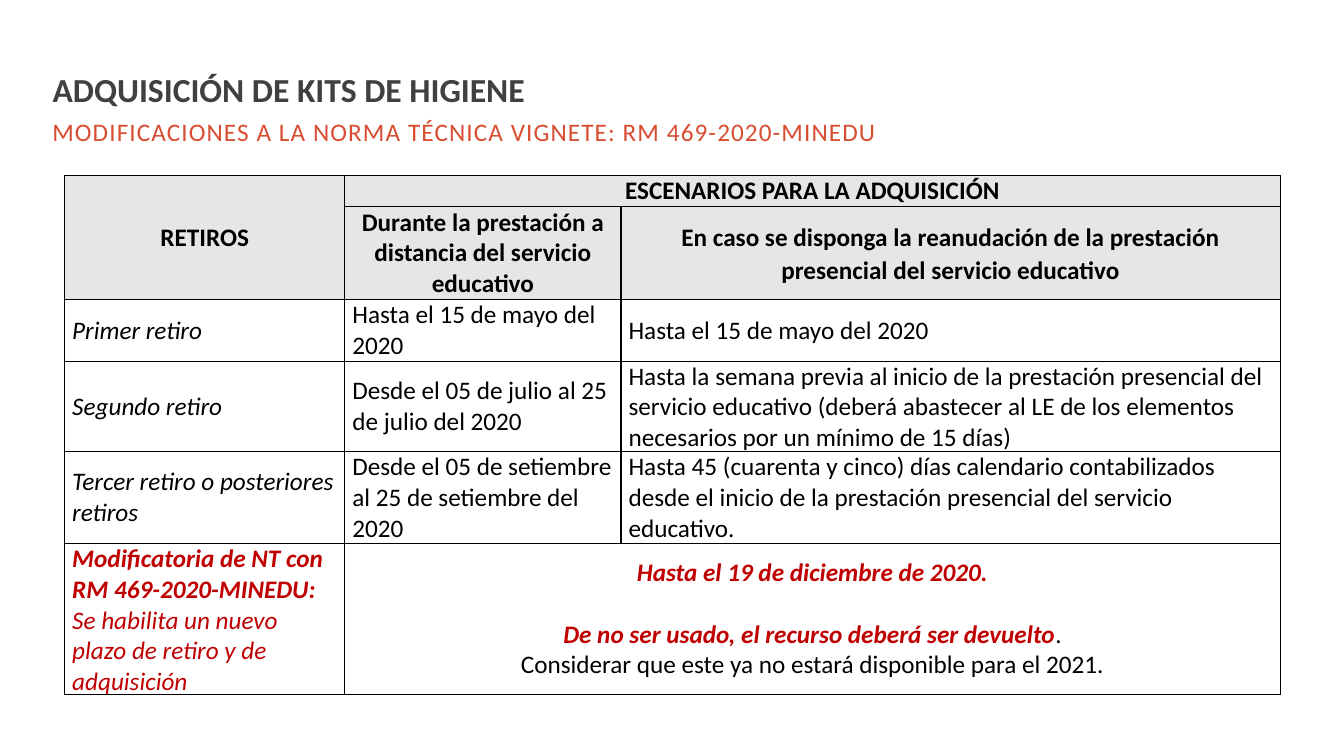
from lxml import etree
from pptx import Presentation
from pptx.dml.color import RGBColor
from pptx.enum.text import MSO_ANCHOR, MSO_AUTO_SIZE, PP_ALIGN
from pptx.oxml import parse_xml
from pptx.oxml.ns import nsdecls
from pptx.util import Cm, Pt

MIDDLE, BOTTOM = MSO_ANCHOR.MIDDLE, MSO_ANCHOR.BOTTOM
LEFT, CENTER = PP_ALIGN.LEFT, PP_ALIGN.CENTER
NO_AUTOFIT = MSO_AUTO_SIZE.NONE
BLACK, RED, GREY = "000000", "C00000", "E7E6E6"


def color(value):
    return RGBColor.from_string(value)


def style(paragraph, size=18, ink=BLACK, bold=False, italic=False, align=LEFT):
    paragraph.alignment = align
    font = paragraph.font
    font.name, font.size = "Calibri", Pt(size)
    font.bold, font.italic = bold, italic
    font.color.rgb = color(ink)


presentation = Presentation()
presentation.slide_width, presentation.slide_height = Cm(33.87), Cm(19.05)
slide = presentation.slides.add_slide(presentation.slide_layouts[5])

title = slide.shapes.title
title.left, title.top, title.width, title.height = Cm(1.07), Cm(1.98), Cm(19.35), Cm(0.91)
title.text_frame.text = "ADQUISICIÓN DE KITS DE HIGIENE"
title.text_frame.vertical_anchor = BOTTOM
title.text_frame.auto_size = NO_AUTOFIT
title.text_frame.paragraphs[0].line_spacing = 0.9
style(title.text_frame.paragraphs[0], 24, "404040", bold=True)

subtitle = slide.shapes.add_textbox(Cm(1.07), Cm(2.8), Cm(23.72), Cm(1.02))
subtitle.text_frame.word_wrap = True
paragraph = subtitle.text_frame.paragraphs[0]
run = paragraph.add_run()
run.text = "MODIFICACIONES A LA NORMA TÉCNICA VIGNETE: RM 469-2020-MINEDU"
style(paragraph, ink="D84C30")
run.font._element.set("spc", "80")

column_widths = [7.06, 6.96, 16.61]
row_heights = [0.79, 2.34, 1.55, 2.26, 2.31, 3.81]
rows = [
    ["RETIROS", "ESCENARIOS PARA LA ADQUISICIÓN", ""],
    ["", "Durante la prestación a distancia del servicio educativo",
     "En caso se disponga la reanudación de la prestación presencial del servicio educativo"],
    ["Primer retiro", "Hasta el 15 de mayo del 2020", "Hasta el 15 de mayo del 2020"],
    ["Segundo retiro", "Desde el 05 de julio al 25 de julio del 2020",
     "Hasta la semana previa al inicio de la prestación presencial del servicio educativo "
     "(deberá abastecer al LE de los elementos necesarios por un mínimo de 15 días)"],
    ["Tercer retiro o posteriores retiros", "Desde el 05 de setiembre al 25 de setiembre del 2020",
     "Hasta 45 (cuarenta y cinco) días calendario contabilizados desde el inicio de la "
     "prestación presencial del servicio educativo."],
    ["", "", ""],
]
table = slide.shapes.add_table(len(rows), len(column_widths), Cm(1.63), Cm(4.42),
                               Cm(sum(column_widths)), Cm(sum(row_heights))).table
table.first_row = table.horz_banding = False
for column, width in zip(table.columns, column_widths):
    column.width = Cm(width)
for row, height in zip(table.rows, row_heights):
    row.height = Cm(height)

for row_index, texts in enumerate(rows):
    header = row_index < 2
    for column_index, text in enumerate(texts):
        cell = table.cell(row_index, column_index)
        cell.margin_left = cell.margin_right = Cm(0.19)
        cell.margin_top = cell.margin_bottom = 0
        cell.vertical_anchor = MIDDLE
        cell.text = text
        style(cell.text_frame.paragraphs[0], bold=header,
              italic=column_index == 0 and not header, align=CENTER if header else LEFT)
        properties = cell._tc.get_or_add_tcPr()
        for side in ("lnL", "lnR", "lnT", "lnB"):
            border = parse_xml(f'<a:{side} {nsdecls("a")} w="12700"/>')
            fill = etree.SubElement(border, border.tag.replace(side, "solidFill"))
            etree.SubElement(fill, border.tag.replace(side, "srgbClr"), val=BLACK)
            properties.append(border)
        if header:
            cell.fill.solid()
            cell.fill.fore_color.rgb = color(GREY)
        else:
            cell.fill.background()

table.cell(1, 2).text_frame.paragraphs[0].line_spacing = 1.07
table.cell(0, 0).merge(table.cell(1, 0))
table.cell(0, 1).merge(table.cell(0, 2))
table.cell(5, 1).merge(table.cell(5, 2))

amendment = table.cell(5, 0).text_frame.paragraphs[0]
heading = amendment.add_run()
heading.text = "Modificatoria de NT con RM 469-2020-MINEDU: "
amendment.add_run().text = "Se habilita un nuevo plazo de retiro y de adquisición"
style(amendment, ink=RED, italic=True)
heading.font.bold = True

deadline_frame = table.cell(5, 1).text_frame
deadline_frame.text = "\n".join([
    "Hasta el 19 de diciembre de 2020.",
    "De no ser usado, el recurso deberá ser devuelto",
    "Considerar que este ya no estará disponible para el 2021.",
])
deadline, refund, notice = deadline_frame.paragraphs
for paragraph in (deadline, refund):
    style(paragraph, ink=RED, bold=True, italic=True, align=CENTER)
style(notice, align=CENTER)
refund.space_before = Pt(22)
period = refund.add_run()
period.text = "."
period.font.bold = period.font.italic = False
period.font.color.rgb = color(BLACK)

presentation.save("out.pptx")
